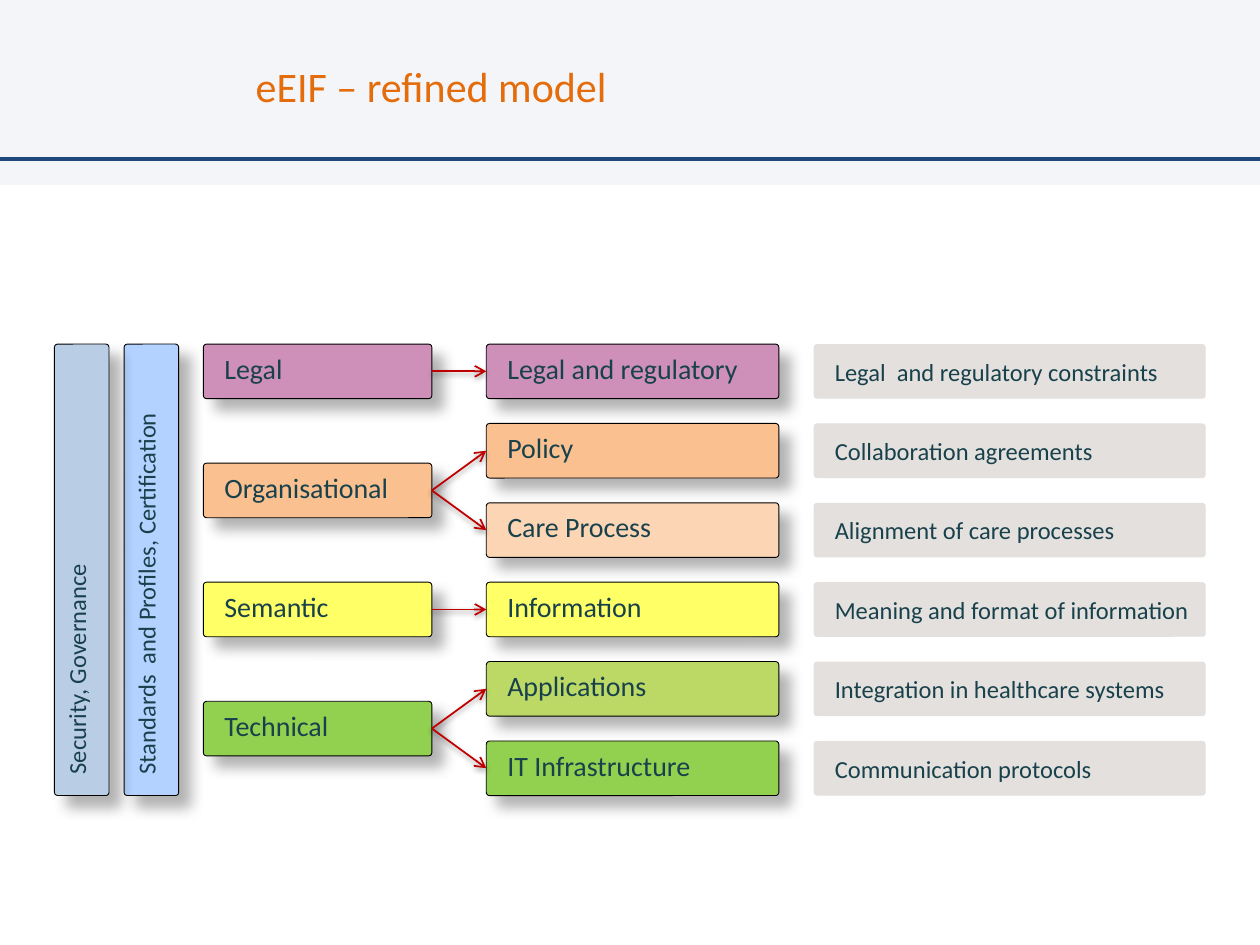
from pptx import Presentation, util as u
from pptx.dml.color import RGBColor
from pptx.enum import shapes, text
from pptx.oxml import parse_xml
from pptx.oxml.ns import nsdecls

INK = "18414C"
ROW_TOP, ROW_PITCH, BOX_HEIGHT = 196.6, 45.36, 31.2
LAYER_LEFT, LAYER_WIDTH = 116.2, 130.6
LEVEL_LEFT, LEVEL_WIDTH = 277.9, 167.2
NOTE_LEFT, NOTE_WIDTH = 465, 224
BAR_LENGTH = 5 * ROW_PITCH + BOX_HEIGHT

# Layer, colour, and its levels: (name, colour, note)
LAYERS = [
    ("Legal", "CE90B8", [
        ("Legal and regulatory", "CE90B8", "Legal  and regulatory constraints")]),
    ("Organisational", "FAC090", [
        ("Policy", "FAC090", "Collaboration agreements"),
        ("Care Process", "FCD5B5", "Alignment of care processes")]),
    ("Semantic", "FFFF66", [
        ("Information", "FFFF66", "Meaning and format of information")]),
    ("Technical", "92D050", [
        ("Applications", "BDD965", "Integration in healthcare systems"),
        ("IT Infrastructure", "92D050", "Communication protocols")]),
]

# Vertical bars: (name, colour, horizontal centre)
BARS = [
    ("Standards  and Profiles, Certification", "B3D2FF", 86.5),
    ("Security, Governance", "B9CDE5", 46.7),
]


def colour(value):
    return RGBColor.from_string(value)


def set_values(target, values):
    for name, value in values.items():
        setattr(target, name, value)


def add_shadow(shape, alpha, blur, distance, angle):
    shape.element.spPr.append(parse_xml(
        f'<a:effectLst {nsdecls("a")}><a:outerShdw blurRad="{u.Pt(blur)}" '
        f'dist="{u.Pt(distance)}" dir="{angle * 60000}" algn="tl" rotWithShape="0">'
        f'<a:srgbClr val="000000"><a:alpha val="{alpha * 1000}"/></a:srgbClr>'
        '</a:outerShdw></a:effectLst>'))


def write(shape, words, size, ink, anchor, left_inset=7.2):
    frame = shape.text_frame
    set_values(frame, {
        "word_wrap": True, "vertical_anchor": anchor,
        "margin_left": u.Pt(left_inset), "margin_right": u.Pt(7.2),
        "margin_top": u.Pt(3.6), "margin_bottom": u.Pt(3.6)})
    para = frame.paragraphs[0]
    para.alignment = text.PP_ALIGN.LEFT
    span = para.add_run()
    span.text = words
    set_values(span.font, {"name": "Calibri", "size": u.Pt(size)})
    span.font.color.rgb = colour(ink)


def add_box(page, words, left, top, width, fill, size=16, raised=True):
    box = page.shapes.add_shape(
        shapes.MSO_SHAPE.ROUNDED_RECTANGLE,
        u.Pt(left), u.Pt(top), u.Pt(width), u.Pt(BOX_HEIGHT))
    box.adjustments[0] = 0.06
    box.fill.solid()
    box.fill.fore_color.rgb = colour(fill)
    if raised:
        box.line.color.rgb = colour("000000")
        box.line.width = u.Pt(0.5)
        add_shadow(box, 30, 8, 9, 45)
    else:
        box.line.fill.background()
        box.shadow.inherit = False
    anchor = text.MSO_ANCHOR.TOP if raised else text.MSO_ANCHOR.MIDDLE
    write(box, words, size, INK, anchor, 11.5)
    return box


def add_line(page, start, end, ink, width):
    line = page.shapes.add_connector(
        shapes.MSO_CONNECTOR.STRAIGHT, *(u.Pt(value) for value in (*start, *end)))
    line.line.color.rgb = colour(ink)
    line.line.width = u.Pt(width)
    return line


def add_arrow(page, start, end):
    arrow = add_line(page, start, end, "C00000", 1)
    arrow.line._get_or_add_ln().append(
        parse_xml(f'<a:tailEnd {nsdecls("a")} type="arrow"/>'))
    add_shadow(arrow, 38, 3.1, 1.6, 90)


def add_background(page):
    page.background.fill.solid()
    page.background.fill.fore_color.rgb = colour("F3F5F9")
    rule = add_line(page, (720, 90.7), (0, 90.7), "1F497D", 2.25)
    rule.element.spPr.append(parse_xml(f'<a:effectLst {nsdecls("a")}/>'))
    panel = page.shapes.add_shape(
        shapes.MSO_SHAPE.RECTANGLE, 0, u.Pt(105.8), u.Pt(720), u.Pt(434.2))
    panel.fill.solid()
    panel.fill.fore_color.rgb = colour("FFFFFF")
    panel.line.fill.background()
    panel.shadow.inherit = False


def add_model(page):
    row = 0
    for layer, fill, levels in LAYERS:
        # Each layer is centred on the rows of its levels
        layer_top = ROW_TOP + (row + (len(levels) - 1) / 2) * ROW_PITCH
        add_box(page, layer, LAYER_LEFT, layer_top, LAYER_WIDTH, fill)
        start = (LAYER_LEFT + LAYER_WIDTH, layer_top + BOX_HEIGHT / 2)
        for level, level_fill, note in levels:
            top = ROW_TOP + row * ROW_PITCH
            add_box(page, level, LEVEL_LEFT, top, LEVEL_WIDTH, level_fill)
            add_arrow(page, start, (LEVEL_LEFT, top + BOX_HEIGHT / 2))
            add_box(page, note, NOTE_LEFT, top, NOTE_WIDTH, "E3E0DD", 14, False)
            row += 1


def add_bars(page):
    top = ROW_TOP + (BAR_LENGTH - BOX_HEIGHT) / 2
    for words, fill, centre in BARS:
        bar = add_box(page, words, centre - BAR_LENGTH / 2, top, BAR_LENGTH, fill, 14)
        bar.rotation = 270


def add_title(page):
    title = page.shapes.add_textbox(u.Pt(139), u.Pt(15.1), u.Pt(473.8), u.Pt(67.7))
    write(title, "eEIF – refined model", 24, "E46C0A", text.MSO_ANCHOR.MIDDLE)


def main():
    deck = Presentation()
    set_values(deck, {"slide_width": u.Pt(720), "slide_height": u.Pt(540)})
    page = deck.slides.add_slide(deck.slide_layouts[6])
    add_background(page)
    add_model(page)
    add_bars(page)
    add_title(page)
    deck.save("out.pptx")


if __name__ == "__main__":
    main()
